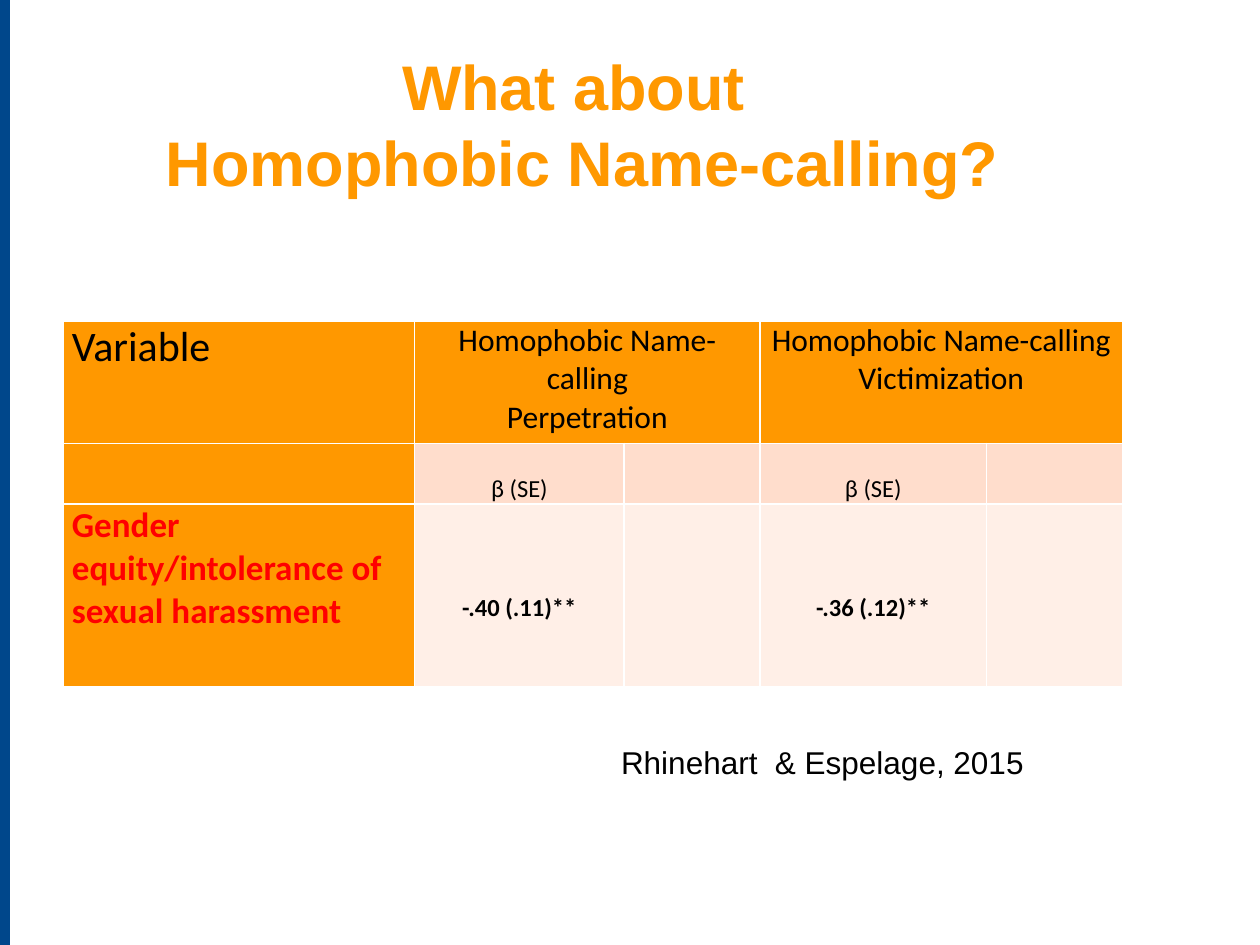
from dataclasses import dataclass
from typing import Any

from lxml import etree
from pptx import Presentation
from pptx.dml.color import RGBColor
from pptx.enum import shapes, text
from pptx.oxml import ns
from pptx.util import Cm, Pt


@dataclass(frozen=True)
class Theme:
    orange: str = "FF9800"
    blue: str = "00478B"
    peach: str = "FFDDCC"
    pale: str = "FFEFE7"
    black: str = "000000"
    red: str = "FF0000"
    white: str = "FFFFFF"
    heading_font: str = "Arial"
    table_font: str = "Calibri"
    title_size: int = 36
    corner_size: int = 24
    label_size: int = 20
    body_size: int = 18
    value_size: int = 14


THEME = Theme()
LEFT, CENTER = text.PP_ALIGN.LEFT, text.PP_ALIGN.CENTER
TOP, BOTTOM = text.MSO_ANCHOR.TOP, text.MSO_ANCHOR.BOTTOM


@dataclass(frozen=True)
class Style:
    size: int
    color: str = THEME.black
    bold: bool = False
    font: str = THEME.table_font
    align: Any = CENTER


@dataclass(frozen=True)
class Entry:
    row: int
    column: int
    lines: tuple[str, ...]
    style: Style
    anchor: Any = TOP
    top_margin: float = 0
    columns: int = 1


TITLE = Style(THEME.title_size, THEME.orange, True, THEME.heading_font)
CITATION = Style(THEME.body_size, font=THEME.heading_font, align=LEFT)
CORNER = Style(THEME.corner_size, align=LEFT)
GROUP = Style(THEME.body_size)
MEASURE = Style(THEME.value_size)
LABEL = Style(THEME.label_size, THEME.red, True, align=LEFT)
VALUE = Style(THEME.value_size, bold=True)

COLUMN_WIDTHS = (7.09, 4.22, 2.74, 4.57, 2.74)
ROW_HEIGHTS = (2.46, 1.22, 3.68)
BODY_FILLS = (THEME.orange, THEME.peach, THEME.pale)
OUTCOMES = (
    (1, "Perpetration", "-.40 (.11)**"),
    (3, "Victimization", "-.36 (.12)**"),
)


def set_all(target: Any, values: dict[str, Any]) -> None:
    for name, value in values.items():
        setattr(target, name, value)


def write(frame: Any, lines: tuple[str, ...], style: Style) -> None:
    """Write one paragraph per entry; a vertical tab makes a line break."""
    for index, line in enumerate(lines):
        para = frame.paragraphs[0] if index == 0 else frame.add_paragraph()
        para.text = line
        para.alignment = style.align
        for span in para.runs:
            set_all(span.font, {"name": style.font, "size": Pt(style.size), "bold": style.bold})
            span.font.color.rgb = RGBColor.from_string(style.color)


def add_label(page: Any, place: tuple[float, ...], lines: tuple[str, ...],
              style: Style, wrap: bool) -> None:
    box = page.shapes.add_textbox(*map(Cm, place))
    box.text_frame.word_wrap = wrap
    write(box.text_frame, lines, style)


def add_borders(cell: Any) -> None:
    properties = cell._tc.get_or_add_tcPr()
    for index, side in enumerate(("lnL", "lnR", "lnT", "lnB")):
        line = etree.Element(ns.qn(f"a:{side}"), w=str(Pt(1)))
        fill = etree.SubElement(line, ns.qn("a:solidFill"))
        etree.SubElement(fill, ns.qn("a:srgbClr"), val=THEME.white)
        properties.insert(index, line)


def add_results(page: Any, entries: list[Entry]) -> None:
    frame = page.shapes.add_table(len(ROW_HEIGHTS), len(COLUMN_WIDTHS), Cm(1.27), Cm(6.48),
                                  Cm(sum(COLUMN_WIDTHS)), Cm(sum(ROW_HEIGHTS)))
    table = frame.table
    for column, width in zip(table.columns, COLUMN_WIDTHS):
        column.width = Cm(width)
    for row_index, (row, height) in enumerate(zip(table.rows, ROW_HEIGHTS)):
        row.height = Cm(height)
        for column_index, cell in enumerate(row.cells):
            color = THEME.orange if column_index == 0 else BODY_FILLS[row_index]
            cell.fill.solid()
            cell.fill.fore_color.rgb = RGBColor.from_string(color)
            add_borders(cell)
    for entry in entries:
        cell = table.cell(entry.row, entry.column)
        if entry.columns > 1:
            cell.merge(table.cell(entry.row, entry.column + entry.columns - 1))
        set_all(cell, {
            "margin_left": Cm(0.18), "margin_right": Cm(0.18),
            "margin_top": Cm(entry.top_margin), "margin_bottom": 0,
            "vertical_anchor": entry.anchor,
        })
        write(cell.text_frame, entry.lines, entry.style)


def result_entries() -> list[Entry]:
    entries = [
        Entry(0, 0, ("Variable",), CORNER),
        Entry(2, 0, ("Gender equity/intolerance of sexual harassment",), LABEL),
    ]
    for column, outcome, value in OUTCOMES:
        entries += [
            Entry(0, column, ("Homophobic Name-calling", outcome), GROUP, columns=2),
            Entry(1, column, ("β (SE)",), MEASURE, BOTTOM),
            Entry(2, column, (value,), VALUE, top_margin=1.8),
        ]
    return entries


def main() -> None:
    deck = Presentation()
    set_all(deck, {"slide_width": Cm(25.4), "slide_height": Cm(19.05)})
    page = deck.slides.add_slide(deck.slide_layouts[6])

    stripe = page.shapes.add_shape(shapes.MSO_SHAPE.RECTANGLE, 0, 0, Cm(0.2), deck.slide_height)
    stripe.shadow.inherit = False
    stripe.fill.solid()
    stripe.fill.fore_color.rgb = RGBColor.from_string(THEME.blue)
    stripe.line.fill.background()

    add_label(page, (0.84, 0.84, 21.8, 1.9),
              ("What about \vHomophobic Name-calling?",), TITLE, True)
    add_results(page, result_entries())
    add_label(page, (12.27, 14.86, 8.71, 1.02),
              ("Rhinehart  & Espelage, 2015",), CITATION, False)
    deck.save("out.pptx")


if __name__ == "__main__":
    main()
